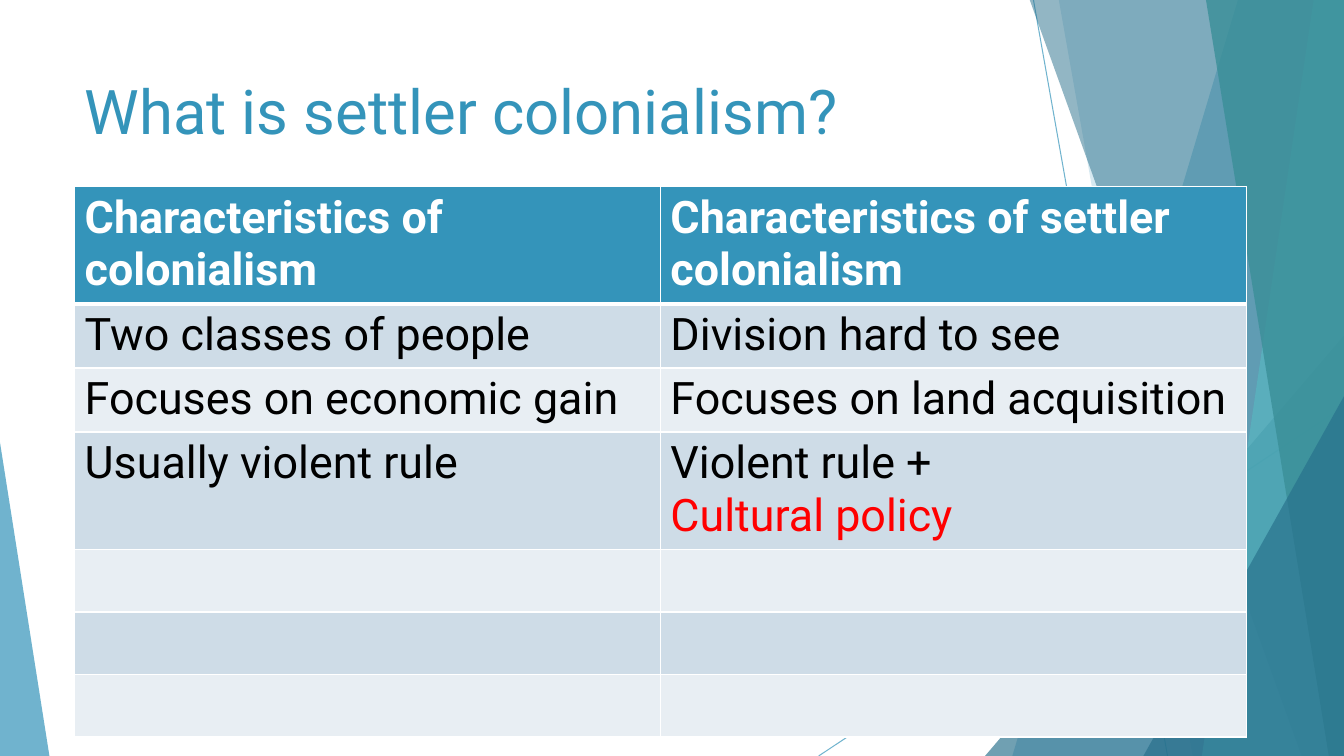
import pptx
import pptx.util
import pptx.dml.color
import pptx.enum.shapes
import pptx.enum.text
import pptx.oxml.ns
from lxml import etree

FONT = "Roboto"
COLOURS = {
    "blue": "3494BA", "deep blue": "276F8B", "aqua": "58B6C0", "teal": "3A8F98",
    "band dark": "CEDCE7", "band light": "E8EEF3",
    "white": "FFFFFF", "black": "000000", "red": "FF0000",
}
TITLE = "What is settler colonialism?"
# Each cell is a list of paragraphs: (text, colour)
HEADINGS = ["Characteristics of colonialism", "Characteristics of settler colonialism"]
COMPARISON = [
    ([("Two classes of people", "black")], [("Division hard to see", "black")]),
    ([("Focuses on economic gain", "black")], [("Focuses on land acquisition", "black")]),
    ([("Usually violent rule", "black")],
     [("Violent rule +", "black"), ("Cultural policy", "red")]),
    ([], []),
    ([], []),
    ([], []),
]

WIDTH, HEIGHT = 13.33, 7.5
BLEED = -0.01
MARGIN = 0.74
TABLE_TOP, COLUMN = 1.85, 5.81
ONE_LINE, TWO_LINES = 0.62, 1.15

RAYS = [((10.25, 0), (11.58, HEIGHT)), ((WIDTH, 4.03), (8.12, HEIGHT))]
# Facets from back to front. A panel runs from its slanted left edge (x at top,
# x at bottom) to the slide's right side; a wedge is (left, top, width, apex).
FACETS = [
    ("panel", (12.28, 10.04), "blue", 36),
    ("panel", (10.5, 11.83), "blue", 20),
    ("wedge", (9.77, 3.33, 3.56, 1), "deep blue", 66),
    ("panel", (10.21, 12.91), "deep blue", 50),
    ("panel", (13.03, 11.92), "aqua", 70),
    ("panel", (11.96, 13.18), "teal", 80),
    ("wedge", (11.34, 3.93, 1.99, 1), "deep blue", 66),
    ("wedge", (0, 4.39, 0.49, 0), "blue", 70),
]

inch = pptx.util.Inches
qn = pptx.oxml.ns.qn


def rgb(colour):
    return pptx.dml.color.RGBColor.from_string(COLOURS[colour])


def set_alpha(properties, percent):
    """Make the first solid colour below properties see-through."""
    colour = next(properties.iter(qn("a:srgbClr")))
    etree.SubElement(colour, qn("a:alpha"), val=str(percent * 1000))


def add_ray(shapes, start, end):
    ray = shapes.add_connector(pptx.enum.shapes.MSO_CONNECTOR.STRAIGHT,
                               *map(inch, start + end))
    ray.line.color.rgb = rgb("blue")
    ray.line.width = pptx.util.Pt(0.75)
    properties = ray.line._get_or_add_ln().getparent()
    set_alpha(properties, 70)
    etree.SubElement(properties, qn("a:effectLst"))


def add_facet(shapes, kind, place, colour, alpha):
    if kind == "panel":
        top_x, bottom_x = place
        outline = shapes.build_freeform(inch(top_x), inch(BLEED))
        corners = [(WIDTH, BLEED), (WIDTH, HEIGHT), (bottom_x, HEIGHT)]
        outline.add_line_segments([(inch(x), inch(y)) for x, y in corners], close=True)
        facet = outline.convert_to_shape()
    else:
        left, top, width, apex = place
        facet = shapes.add_shape(pptx.enum.shapes.MSO_SHAPE.ISOSCELES_TRIANGLE,
                                 *map(inch, (left, top, width, HEIGHT - top)))
        facet.adjustments[0] = apex
    facet.shadow.inherit = False
    facet.line.fill.background()
    facet.fill.solid()
    facet.fill.fore_color.rgb = rgb(colour)
    set_alpha(facet._element.spPr, alpha)


def write(paragraph, text, size, colour, bold=False):
    run = paragraph.add_run()
    run.text = text
    run.font.name = FONT
    run.font.size = pptx.util.Pt(size)
    run.font.bold = bold
    run.font.color.rgb = rgb(colour)


def add_borders(cell, bottom):
    properties = cell._tc.get_or_add_tcPr()
    for side, points in (("L", 1), ("R", 1), ("T", 1), ("B", bottom)):
        border = etree.SubElement(properties, qn("a:ln" + side),
                                  w=str(pptx.util.Pt(points)))
        fill = etree.SubElement(border, qn("a:solidFill"))
        etree.SubElement(fill, qn("a:srgbClr"), val=COLOURS["white"])


def add_comparison(shapes):
    rows = [[[(heading, "white")] for heading in HEADINGS], *COMPARISON]
    heights = [TWO_LINES] + [TWO_LINES if max(map(len, row)) > 1 else ONE_LINE
                             for row in COMPARISON]
    table = shapes.add_table(len(rows), len(HEADINGS), inch(MARGIN), inch(TABLE_TOP),
                             inch(COLUMN * len(HEADINGS)), inch(sum(heights))).table
    table.horz_banding = False
    for column in table.columns:
        column.width = inch(COLUMN)
    for r, (row, height) in enumerate(zip(rows, heights)):
        table.rows[r].height = inch(height)
        header = r == 0
        band = "blue" if header else ("band light", "band dark")[r % 2]
        for c, lines in enumerate(row):
            cell = table.cell(r, c)
            add_borders(cell, bottom=3 if header else 1)
            cell.fill.solid()
            cell.fill.fore_color.rgb = rgb(band)
            frame = cell.text_frame
            for i, (text, colour) in enumerate(lines):
                paragraph = frame.add_paragraph() if i else frame.paragraphs[0]
                write(paragraph, text, 32, colour, bold=header)


def main():
    deck = pptx.Presentation()
    deck.slide_width, deck.slide_height = inch(WIDTH), inch(HEIGHT)
    shapes = deck.slides.add_slide(deck.slide_layouts[6]).shapes
    for start, end in RAYS:
        add_ray(shapes, start, end)
    for facet in FACETS:
        add_facet(shapes, *facet)
    title = shapes.add_textbox(*map(inch, (MARGIN, 0.67, 9.4, 1.44))).text_frame
    title.word_wrap = True
    title.vertical_anchor = pptx.enum.text.MSO_ANCHOR.TOP
    write(title.paragraphs[0], TITLE, 44, "blue")
    add_comparison(shapes)
    deck.save("out.pptx")


if __name__ == "__main__":
    main()
